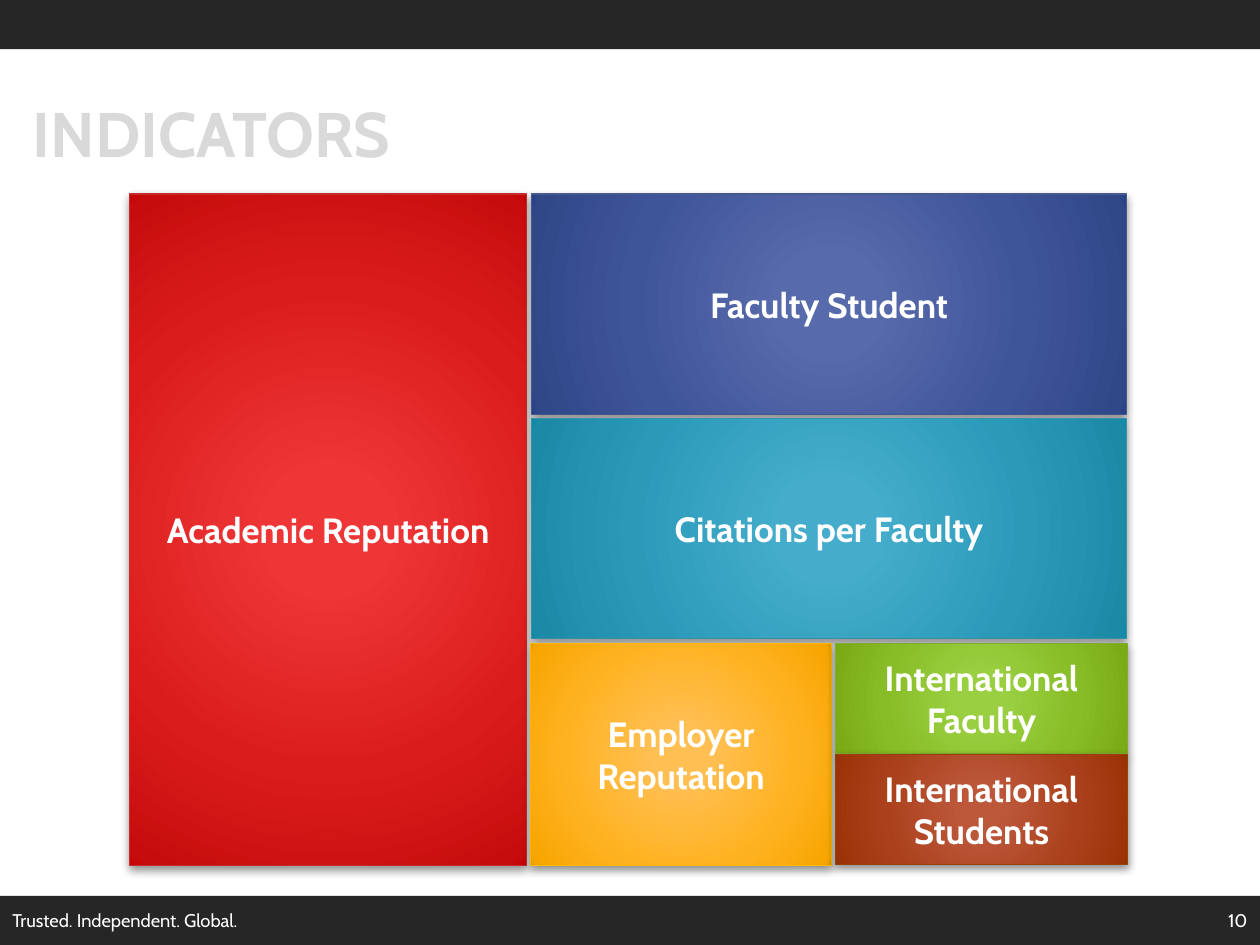
from pptx import Presentation
from pptx import util as u
from pptx.dml.color import RGBColor
from pptx.enum import shapes, text
from pptx.oxml import parse_xml
from pptx.oxml.ns import nsdecls

STOPS = (0, 15, 62, 97, 100)
BAR_HEIGHT = 0.39
FOOTER_TOP = 7.11
TOP = 1.54

INDICATORS = [
    ("Academic Reputation", (1.03, TOP, 3.15, 5.33), "C32D2E",
     ("EF3737", "EE3637", "DB1C1C", "C70C0D", "C30001")),
    ("Faculty Student", (4.22, TOP, 4.72, 1.75), "475A8D",
     ("576BAC", "576AAB", "3F5599", "304788", "264086")),
    ("Citations per Faculty", (4.22, 3.32, 4.72, 1.75), "3891A7",
     ("45ACCC", "45ACCB", "2B9AB9", "1C8AA7", "0E89A7")),
    ("Employer Reputation", (4.21, 5.11, 2.39, 1.76), "FEB80A",
     ("FFBF54", "FFBF53", "FFB221", "F6A500", "D69900")),
    ("International Faculty", (6.63, 5.11, 2.32, 0.87), "84AA33",
     ("9AD041", "9ACF41", "88BD27", "79AB17", "77AC08")),
    ("International Students", (6.63, 5.99, 2.32, 0.87), "964305",
     ("BD583A", "BC573A", "AB411C", "9C3308", "7E3600")),
]


def color(value):
    return RGBColor.from_string(value)


def inches(box):
    return [u.Inches(length) for length in box]


def write(frame, wording, size, align, hue="FFFFFF", bold=False):
    frame.word_wrap = True
    frame.vertical_anchor = text.MSO_ANCHOR.MIDDLE
    frame.text = wording
    paragraph = frame.paragraphs[0]
    paragraph.alignment = align
    font = paragraph.runs[0].font
    formats = {"name": "Cabin", "size": u.Pt(size), "bold": bold}
    for name, value in formats.items():
        setattr(font, name, value)
    font.color.rgb = color(hue)


def add_heading(slide, wording):
    heading = slide.shapes.title
    places = dict(zip(("left", "top", "width", "height"), inches((0.16, 0.55, 9.69, 1))))
    for name, value in places.items():
        setattr(heading, name, value)
    write(heading.text_frame, wording, 36, text.PP_ALIGN.LEFT, "D9D9D9", True)


def add_rectangle(slide, box):
    rectangle = slide.shapes.add_shape(shapes.MSO_SHAPE.RECTANGLE, *inches(box))
    rectangle.shadow.inherit = False
    return rectangle


def add_bar(slide, top):
    bar = add_rectangle(slide, (0, top, 10, BAR_HEIGHT))
    bar.fill.solid()
    bar.fill.fore_color.rgb = color("262626")
    bar.line.fill.background()


def add_footer(slide, wording, left, width, align):
    box = slide.shapes.add_textbox(*inches((left, FOOTER_TOP, width, BAR_HEIGHT)))
    write(box.text_frame, wording, 10.5, align)


def radial_fill(hues):
    stops = "".join(
        f'<a:gs pos="{stop * 1000}"><a:srgbClr val="{hue}"/></a:gs>'
        for stop, hue in zip(STOPS, hues))
    return parse_xml(
        f'<a:gradFill {nsdecls("a")} rotWithShape="1"><a:gsLst>{stops}</a:gsLst>'
        '<a:path path="circle"><a:fillToRect l="50000" t="50000" r="50000" b="50000"/>'
        '</a:path></a:gradFill>')


def drop_shadow():
    return parse_xml(
        f'<a:outerShdw {nsdecls("a")} blurRad="{u.Pt(5)}" dist="{u.Pt(2)}" '
        'dir="5400000" algn="ctr" rotWithShape="0"><a:srgbClr val="000000">'
        '<a:alpha val="43000"/></a:srgbClr></a:outerShdw>')


def add_indicator(slide, wording, box, border, hues):
    tile = add_rectangle(slide, box)
    tile.line.color.rgb = color(border)
    tile.line.width = u.Pt(0.75)
    properties = tile.element.spPr
    properties.prstGeom.addnext(radial_fill(hues))
    properties.find("{*}effectLst").append(drop_shadow())
    write(tile.text_frame, wording, 20, text.PP_ALIGN.CENTER, bold=True)


def main():
    deck = Presentation()
    deck.slide_width, deck.slide_height = inches((10, 7.5))
    slide = deck.slides.add_slide(deck.slide_layouts[5])
    for top in (FOOTER_TOP, 0):
        add_bar(slide, top)
    add_heading(slide, "INDICATORS")
    add_footer(slide, "Trusted. Independent. Global.", 0, 7.66, text.PP_ALIGN.LEFT)
    add_footer(slide, "10", 7.67, 2.33, text.PP_ALIGN.RIGHT)
    for indicator in INDICATORS:
        add_indicator(slide, *indicator)
    deck.save("out.pptx")


if __name__ == "__main__":
    main()
